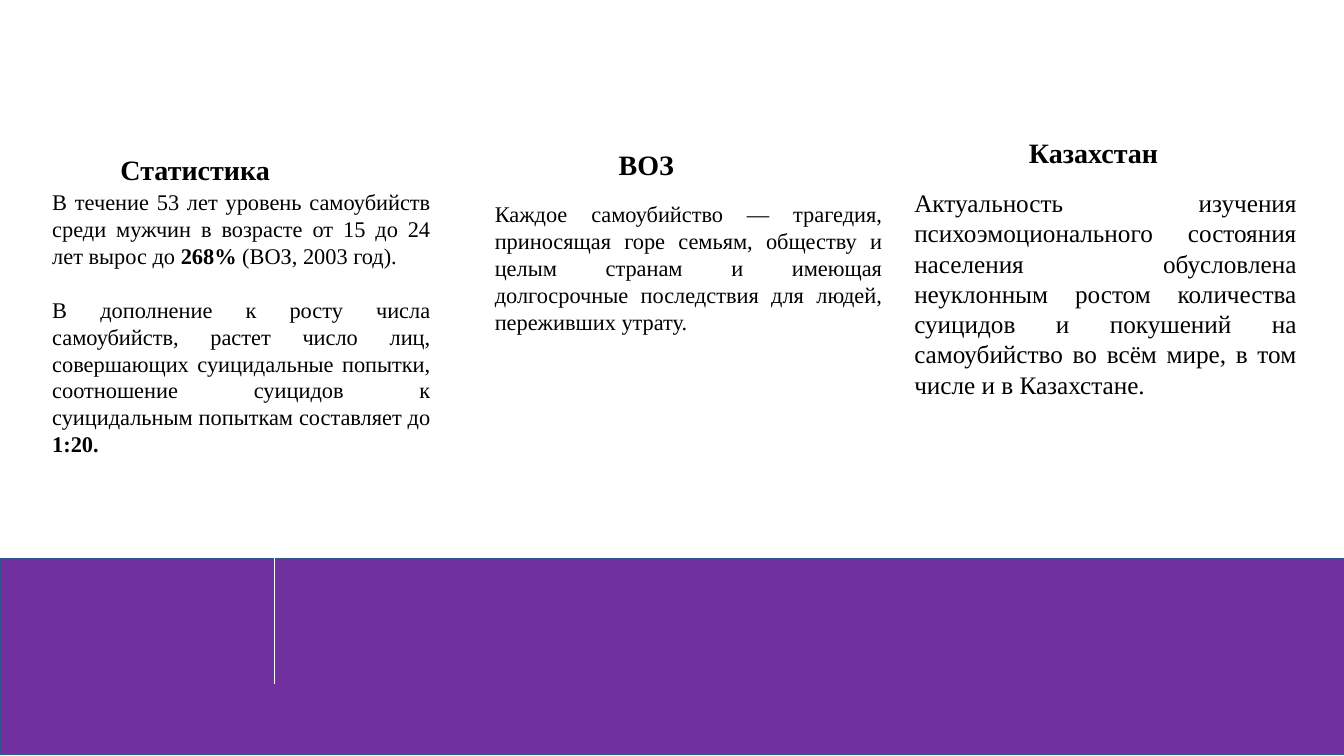
from dataclasses import dataclass

from lxml.etree import SubElement
from pptx import Presentation
from pptx.dml.color import RGBColor
from pptx.enum.shapes import MSO_CONNECTOR, MSO_SHAPE
from pptx.enum.text import PP_ALIGN
from pptx.oxml.ns import qn
from pptx.util import Inches, Pt


@dataclass(frozen=True)
class Theme:
    font: str = "Times New Roman"
    ink: RGBColor = RGBColor(0, 0, 0)
    band: RGBColor = RGBColor(0x70, 0x30, 0xA0)
    band_edge: RGBColor = RGBColor(0x31, 0x53, 0x8F)
    rule: RGBColor = RGBColor(0xFF, 0xFF, 0xFF)
    heading_size: float = 20
    body_size: float = 16
    large_body_size: float = 18
    paragraph_gap: float = 19.2


class SlideBuilder:
    def __init__(self, deck, theme):
        self.deck = deck
        self.theme = theme
        self.slide = deck.slides.add_slide(deck.slide_layouts[6])

    def place(self, left, top, width, height):
        across, down = self.deck.slide_width, self.deck.slide_height
        return [int(share * full / 100) for share, full in
                zip((left, top, width, height), (across, down, across, down))]

    def band(self, *box):
        band = self.slide.shapes.add_shape(MSO_SHAPE.RECTANGLE, *self.place(*box))
        band.shadow.inherit = False
        band.fill.solid()
        band.fill.fore_color.rgb = self.theme.band
        band.line.color.rgb = self.theme.band_edge
        band.line.width = Pt(1)

    def rule(self, left, top, height):
        x, y, _, drop = self.place(left, top, 0, height)
        rule = self.slide.shapes.add_connector(MSO_CONNECTOR.STRAIGHT, x, y, x, y + drop)
        rule.line.color.rgb = self.theme.rule
        rule.line.width = Pt(0.75)
        SubElement(rule._element.spPr, qn("a:effectLst"))

    def text(self, box, paragraphs, size, align, bold=None, spacing=None):
        frame = self.slide.shapes.add_textbox(*self.place(*box)).text_frame
        frame.word_wrap = True
        for index, runs in enumerate(paragraphs):
            paragraph = frame.paragraphs[0] if index == 0 else frame.add_paragraph()
            paragraph.alignment = align
            paragraph.line_spacing = spacing
            if index:
                paragraph.space_before = Pt(self.theme.paragraph_gap)
            paragraph.font.name = self.theme.font
            paragraph.font.size = Pt(size)
            paragraph.font.color.rgb = self.theme.ink
            paragraph.font.bold = bold
            for words, emphasis in runs:
                run = paragraph.add_run()
                run.text = words
                if emphasis:
                    run.font.bold = True

    def heading(self, box, title):
        self.text(box, [[(title, False)]], self.theme.heading_size,
                  PP_ALIGN.CENTER, bold=True, spacing=1.5)

    def body(self, box, paragraphs, size):
        self.text(box, paragraphs, size, PP_ALIGN.JUSTIFY)


def main():
    deck = Presentation()
    deck.slide_width, deck.slide_height = Inches(13.33), Inches(7.5)
    theme = Theme()
    builder = SlideBuilder(deck, theme)
    builder.band(0, 73.87, 100, 25.87)
    builder.rule(20.4, 73.2, 17.33)

    statistics = [
        [("В течение 53 лет уровень самоубийств среди мужчин в возрасте "
          "от 15 до 24 лет вырос до ", False),
         ("268% ", True), ("(ВОЗ, 2003 год). ", False)],
        [("В дополнение к росту числа самоубийств, растет число лиц, "
          "совершающих суицидальные попытки, соотношение суицидов к "
          "суицидальным попыткам составляет до ", False), ("1:20. ", True)],
    ]
    tragedy = [[("Каждое самоубийство — трагедия, приносящая горе семьям, обществу "
                 "и целым странам и имеющая долгосрочные последствия для людей, "
                 "переживших утрату. ", False)]]
    relevance = [[("Актуальность изучения психоэмоционального состояния населения "
                   "обусловлена неуклонным ростом количества суицидов и покушений на "
                   "самоубийство во всём мире, в том числе и в Казахстане. ", False)]]

    columns = [
        ("Статистика", (5.93, 17.33, 17.18, 6.67),
         statistics, (3.15, 24.27, 29.63, 44.13), theme.body_size),
        ("ВОЗ ", (39.76, 16.67, 17.18, 6.67),
         tragedy, (36.08, 25.87, 30.31, 31.47), theme.body_size),
        ("Казахстан", (69.62, 15.07, 23.48, 6.67),
         relevance, (67.29, 24.13, 29.93, 31.47), theme.large_body_size),
    ]
    for title, title_box, paragraphs, body_box, size in columns:
        builder.heading(title_box, title)
        builder.body(body_box, paragraphs, size)

    deck.save("out.pptx")


if __name__ == "__main__":
    main()
